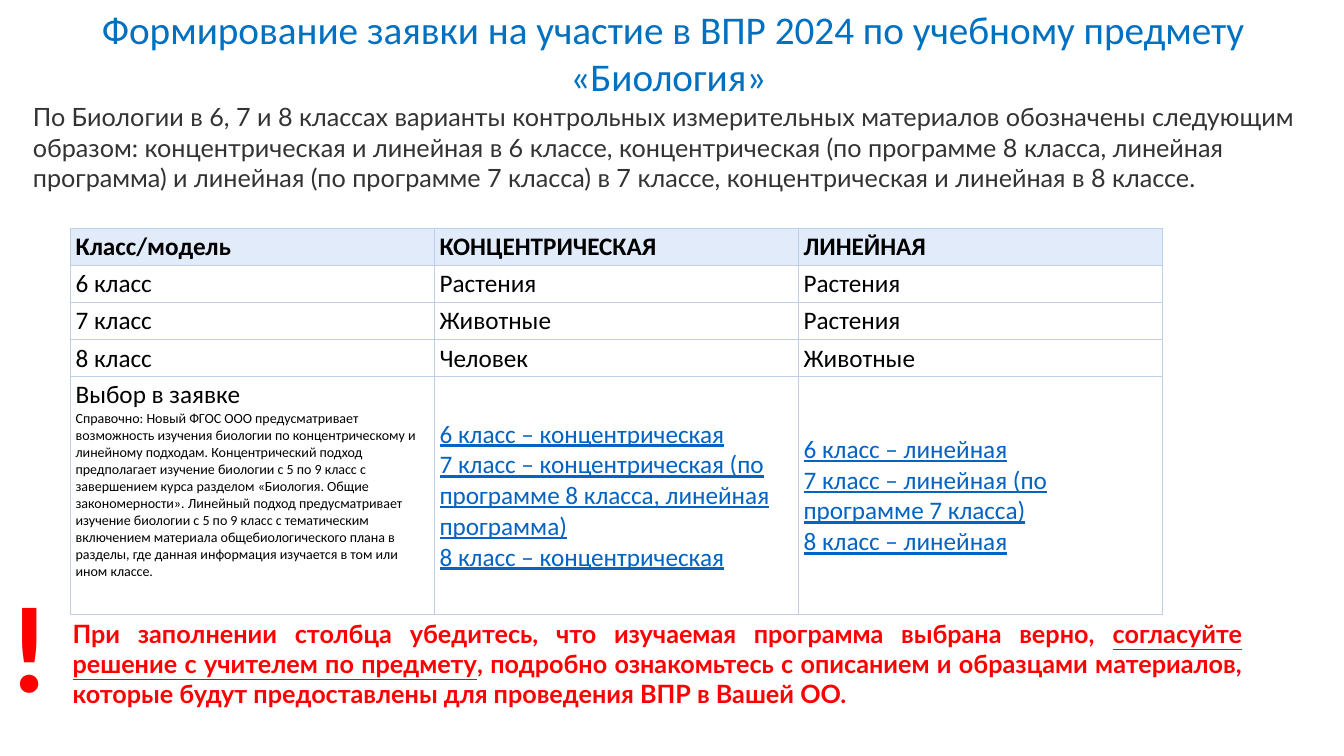
import pptx
import pptx.dml.color
import pptx.enum.text
import pptx.oxml
import pptx.oxml.ns
import pptx.util

Pt = pptx.util.Pt
ALIGN = pptx.enum.text.PP_ALIGN
ANCHOR = pptx.enum.text.MSO_ANCHOR

HEADER = ["Класс/модель", "КОНЦЕНТРИЧЕСКАЯ", "ЛИНЕЙНАЯ"]
SUBJECTS = [
    ["6 класс", "Растения", "Растения"],
    ["7 класс", "Животные", "Растения"],
    ["8 класс", "Человек", "Животные"],
]
REFERENCE = (
    "Справочно: Новый ФГОС ООО предусматривает возможность изучения биологии "
    "по концентрическому и линейному подходам. Концентрический подход предполагает "
    "изучение биологии с 5 по 9 класс с завершением курса разделом «Биология. Общие "
    "закономерности». Линейный подход предусматривает изучение биологии с 5 по 9 класс "
    "с тематическим включением материала общебиологического плана в разделы, где данная "
    "информация изучается в том или ином классе."
)
CHOICES = [
    ["Выбор в заявке", REFERENCE],
    ["6 класс – концентрическая",
     "7 класс – концентрическая (по программе 8 класса, линейная программа)",
     "8 класс – концентрическая"],
    ["6 класс – линейная", "7 класс – линейная (по программе 7 класса)", "8 класс – линейная"],
]
INTRO = (
    "По Биологии в 6, 7 и 8 классах варианты контрольных измерительных материалов "
    "обозначены следующим образом: концентрическая и линейная в 6 классе, концентрическая "
    "(по программе 8 класса, линейная программа) и линейная (по программе 7 класса) "
    "в 7 классе, концентрическая и линейная в 8 классе."
)
WARNING = [
    ("При заполнении столбца убедитесь, что изучаемая программа выбрана верно, ", False),
    ("согласуйте решение с учителем по предмету", True),
    (", подробно ознакомьтесь с описанием и образцами материалов, "
     "которые будут предоставлены для проведения ВПР в Вашей ОО.", False),
]


def rgb(color):
    return pptx.dml.color.RGBColor.from_string(color)


def style(font, size, color, name="Calibri", bold=False, underline=None):
    font.size = Pt(size)
    font.name = name
    font.bold = bold
    font.underline = underline
    font.color.rgb = rgb(color)


def place(sp, left, top, width, height):
    sp.left, sp.top, sp.width, sp.height = Pt(left), Pt(top), Pt(width), Pt(height)


def add_text(slide, box, runs, size, color, name, bold=False, align=ALIGN.LEFT):
    tf = slide.shapes.add_textbox(*map(Pt, box)).text_frame
    tf.word_wrap = True
    p = tf.paragraphs[0]
    p.alignment = align
    style(p.font, size, color, name, bold)
    for text, underlined in runs:
        r = p.add_run()
        r.text = text
        if underlined:
            r.font.underline = True


def set_title(slide, text):
    sp = slide.shapes.title
    place(sp, 28.8, 0, 903.6, 75)
    tf = sp.text_frame
    tf.text = text
    tf.word_wrap = True
    tf.auto_size = pptx.enum.text.MSO_AUTO_SIZE.NONE
    tf.vertical_anchor = ANCHOR.TOP
    p = tf.paragraphs[0]
    p.alignment = ALIGN.CENTER
    style(p.font, 28, "0070C0")


def add_borders(cell, color, width):
    tc_pr = cell._tc.get_or_add_tcPr()
    for i, side in enumerate(("lnL", "lnR", "lnT", "lnB")):
        tc_pr.insert(i, pptx.oxml.parse_xml(
            f'<a:{side} {pptx.oxml.ns.nsdecls("a")} w="{Pt(width)}">'
            f'<a:solidFill><a:srgbClr val="{color}"/></a:solidFill></a:{side}>'))


def fill_cell(cell, lines, fill, color="000000", bold=False, underline=None):
    cell.margin_left = cell.margin_right = Pt(3.6)
    cell.margin_top = cell.margin_bottom = Pt(2.16)
    cell.vertical_anchor = ANCHOR.MIDDLE
    cell.fill.solid()
    cell.fill.fore_color.rgb = rgb(fill)
    add_borders(cell, "BECFE8", 0.75)
    cell.text = "\n".join(lines)
    for p in cell.text_frame.paragraphs:
        style(p.font, 18, color, bold=bold, underline=underline)


def add_models_table(slide):
    heights = [26.5] * 4 + [170]
    table = slide.shapes.add_table(
        5, 3, Pt(50.4), Pt(163.3), Pt(780), Pt(sum(heights))).table
    table.horz_banding = False
    for column in table.columns:
        column.width = Pt(260)
    for row, height in zip(table.rows, heights):
        row.height = Pt(height)
    for c, text in enumerate(HEADER):
        fill_cell(table.cell(0, c), [text], "E1EBFA", bold=True)
    for r, row in enumerate(SUBJECTS, 1):
        for c, text in enumerate(row):
            fill_cell(table.cell(r, c), [text], "FFFFFF")
    note = table.cell(4, 0)
    fill_cell(note, CHOICES[0], "FFFFFF")
    note.vertical_anchor = ANCHOR.TOP
    note.text_frame.paragraphs[1].font.size = Pt(10)
    for c in (1, 2):
        fill_cell(table.cell(4, c), CHOICES[c], "FFFFFF", "0563C1", underline=True)


def main():
    prs = pptx.Presentation()
    prs.slide_width, prs.slide_height = Pt(960), Pt(540)
    slide = prs.slides.add_slide(prs.slide_layouts.get_by_name("Title Only"))
    set_title(slide, "Формирование заявки на участие в ВПР 2024 по учебному предмету «Биология» ")
    add_models_table(slide)
    add_text(slide, (16.4, 69.1, 916, 94.3), [(INTRO, False)], 18, "333333", "Lato")
    add_text(slide, (44.8, 437.8, 849.6, 72.7), WARNING, 18, "FF0000", "Lato",
             bold=True, align=ALIGN.JUSTIFY)
    add_text(slide, (0, 403.2, 69.8, 113.8), [("!", False)], 88, "FF0000", "Calibri",
             bold=True)
    prs.save("out.pptx")


if __name__ == "__main__":
    main()
